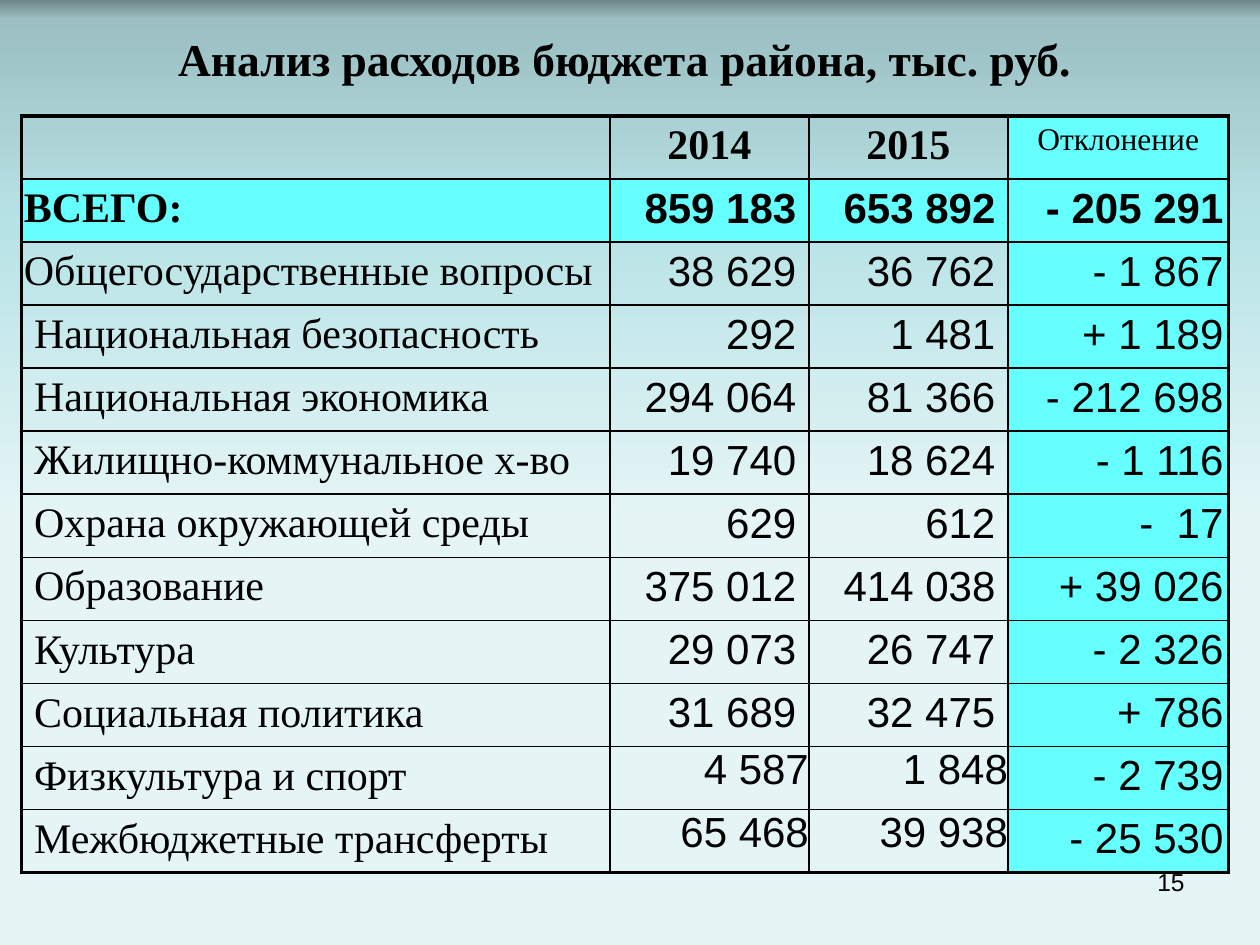
"""Build the district budget expenditure slide."""
from lxml.etree import SubElement
from pptx import Presentation
from pptx.dml.color import RGBColor
from pptx.enum.text import MSO_ANCHOR, PP_ALIGN
from pptx.oxml.ns import qn
from pptx.util import Inches, Pt

TITLE = "Анализ расходов бюджета района, тыс. руб."
PAGE_NUMBER = "15"
ROWS = [
    ("", "2014", "2015", "Отклонение"),
    ("ВСЕГО:", "859 183", "653 892", "- 205 291"),
    ("Общегосударственные вопросы", "38 629", "36 762", "- 1 867"),
    ("Национальная безопасность", "292", "1 481", "+ 1 189"),
    ("Национальная экономика", "294 064", "81 366", "- 212 698"),
    ("Жилищно-коммунальное х-во", "19 740", "18 624", "- 1 116"),
    ("Охрана окружающей среды", "629", "612", "-  17"),
    ("Образование", "375 012", "414 038", "+ 39 026"),
    ("Культура", "29 073", "26 747", "- 2 326"),
    ("Социальная политика", "31 689", "32 475", "+ 786"),
    ("Физкультура и спорт", "4 587", "1 848", "- 2 739"),
    ("Межбюджетные трансферты", "65 468", "39 938", "- 25 530"),
]
COLUMN_WIDTHS = (4.67, 1.58, 1.58, 1.75)
TABLE_HEIGHT = 5.92
HEADER, TOTAL, FIRST_TIGHT = 0, 1, 10
LABEL, DEVIATION = 0, 3
LAST_ROW, LAST_COLUMN = len(ROWS) - 1, len(COLUMN_WIDTHS) - 1
THEME = {
    "text": "000000", "accent": "66FFFF",
    "background": [(0, "6D8688"), (2, "9BBFC2"), (24, "B8E3E6"), (55, "E5F5F6")],
    "serif": "Times New Roman", "sans": "Arial",
    "title": 26, "body": 24, "small": 18, "number": 14,
    "inner": 1, "outer": 2.25,
}


def apply(target, values):
    for name, value in values.items():
        setattr(target, name, value)


def write(text_frame, text, alignment, font, size, bold=False):
    paragraph = text_frame.paragraphs[0]
    paragraph.alignment = alignment
    run = paragraph.add_run()
    run.text = text
    apply(run.font, {"name": font, "size": Pt(size), "bold": bold})
    run.font.color.rgb = RGBColor.from_string(THEME["text"])


def add_text(slide, box, anchor, *content):
    shape = slide.shapes.add_textbox(*map(Inches, box))
    apply(shape.text_frame, {"word_wrap": True, "vertical_anchor": anchor})
    write(shape.text_frame, *content)


def paint_background(slide):
    fill = slide.background.fill
    fill.gradient()
    fill.gradient_angle = 270
    stops = slide.element.find(".//" + qn("a:gsLst"))
    stops.clear()
    for position, color in THEME["background"]:
        stop = SubElement(stops, qn("a:gs"), pos=str(position * 1000))
        SubElement(stop, qn("a:srgbClr"), val=color)


def add_borders(cell, row, column):
    properties = cell._tc.get_or_add_tcPr()
    edges = {"L": column == 0, "R": column == LAST_COLUMN,
             "T": row == 0, "B": row == LAST_ROW}
    for side, is_outer in edges.items():
        width = Pt(THEME["outer" if is_outer else "inner"])
        line = SubElement(properties, qn(f"a:ln{side}"), w=str(int(width)))
        color_fill = SubElement(line, qn("a:solidFill"))
        SubElement(color_fill, qn("a:srgbClr"), val=THEME["text"])


def cell_insets(row, column):
    if row == HEADER:
        return 0.1, 0.05
    if column == DEVIATION:
        return 0.04, 0.05
    if column == LABEL:
        return (0.02 if row <= TOTAL + 1 else 0.1), 0.05
    return (0, 0) if row >= FIRST_TIGHT else (0.1, 0.05)


def format_cell(cell, text, row, column):
    side, vertical = map(Inches, cell_insets(row, column))
    apply(cell, {"margin_left": side, "margin_right": side,
                 "margin_top": vertical, "margin_bottom": vertical})
    add_borders(cell, row, column)
    if row == TOTAL or column == DEVIATION:
        cell.fill.solid()
        cell.fill.fore_color.rgb = RGBColor.from_string(THEME["accent"])
    else:
        cell.fill.background()
    if not text:
        return
    is_small = row == HEADER and column == DEVIATION
    alignment = PP_ALIGN.LEFT if column == LABEL else PP_ALIGN.RIGHT
    write(cell.text_frame, text,
          PP_ALIGN.CENTER if row == HEADER else alignment,
          THEME["serif" if row == HEADER or column == LABEL else "sans"],
          THEME["small" if is_small else "body"],
          row <= TOTAL and not is_small)


def add_budget_table(slide):
    box = (0.17, 0.92, sum(COLUMN_WIDTHS), TABLE_HEIGHT)
    table = slide.shapes.add_table(
        len(ROWS), len(COLUMN_WIDTHS), *map(Inches, box)).table
    apply(table, {"first_row": False, "horz_banding": False})
    for column, width in zip(table.columns, COLUMN_WIDTHS):
        column.width = Inches(width)
    for row, values in enumerate(ROWS):
        table.rows[row].height = Inches(TABLE_HEIGHT / len(ROWS))
        for column, text in enumerate(values):
            format_cell(table.cell(row, column), text, row, column)


def main():
    presentation = Presentation()
    apply(presentation, {"slide_width": Inches(10), "slide_height": Inches(7.5)})
    slide = presentation.slides.add_slide(presentation.slide_layouts[6])
    paint_background(slide)
    add_text(slide, (7.17, 6.83, 2.33, 0.52), MSO_ANCHOR.TOP,
             PAGE_NUMBER, PP_ALIGN.RIGHT, THEME["sans"], THEME["number"])
    add_text(slide, (0.25, 0.25, 9.42, 0.42), MSO_ANCHOR.MIDDLE,
             TITLE, PP_ALIGN.CENTER, THEME["serif"], THEME["title"], True)
    add_budget_table(slide)
    presentation.save("out.pptx")


if __name__ == "__main__":
    main()
